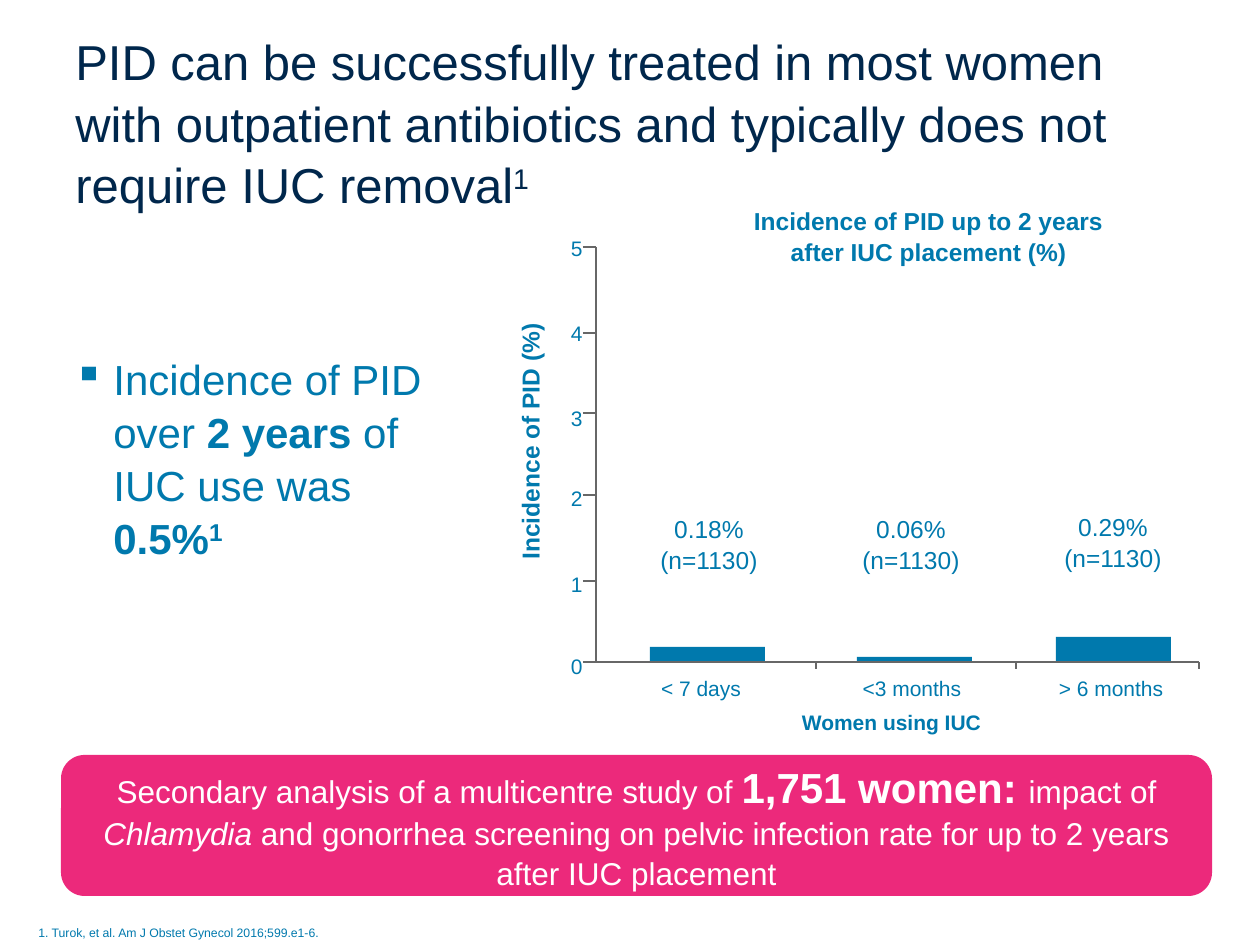
import dataclasses

import lxml.etree
import pptx
import pptx.dml.color
import pptx.enum.shapes
import pptx.enum.text
import pptx.oxml.ns
import pptx.util

SCALE = 914400 / 126
ALIGN = pptx.enum.text.PP_ALIGN
FIT = pptx.enum.text.MSO_AUTO_SIZE
ANCHOR = pptx.enum.text.MSO_ANCHOR
SHAPE = pptx.enum.shapes.MSO_SHAPE
LINK = pptx.enum.shapes.MSO_CONNECTOR
qn = pptx.oxml.ns.qn


@dataclasses.dataclass
class Theme:
    font: str = "Arial"
    navy: str = "00274C"
    blue: str = "0079AD"
    pink: str = "EC297B"
    white: str = "FFFFFF"
    gray: str = "676767"
    title: int = 28
    body: int = 24
    lead: int = 18
    label: int = 14
    small: int = 12
    note: int = 7
    gap: float = 1.05


def px(num):
    return pptx.util.Emu(round(num * SCALE))


def rgb(code):
    return pptx.dml.color.RGBColor.from_string(code)


class Deck:
    """Draw styled elements on the current slide."""

    def __init__(self, theme):
        self.theme = theme
        self.file = pptx.Presentation()
        self.file.slide_width, self.file.slide_height = px(1260), px(945)
        self.slide = self.file.slides.add_slide(self.file.slide_layouts[6])

    def words(self, frame, paras, size, color, align):
        for index, runs in enumerate(paras):
            para = frame.add_paragraph() if index else frame.paragraphs[0]
            para.alignment = align
            para.line_spacing = self.theme.gap
            for words, flags, *other in runs:
                run = para.add_run()
                run.text = words
                font = run.font
                font.name = self.theme.font
                font.size = pptx.util.Pt(other[0] if other else size)
                font.color.rgb = rgb(color)
                font.bold = "b" in flags
                font.italic = "i" in flags
                if "s" in flags:
                    font._element.set("baseline", "30000")

    def text(self, box, paras, size, color=None, align=ALIGN.CENTER,
             pad=None, wrap=True, grow=True, turn=0):
        area = self.slide.shapes.add_textbox(*map(px, box))
        area.rotation = turn
        frame = area.text_frame
        frame.word_wrap = wrap
        frame.auto_size = FIT.SHAPE_TO_FIT_TEXT if grow else FIT.NONE
        if pad is not None:
            frame.margin_left = frame.margin_right = px(pad[0])
            frame.margin_top = frame.margin_bottom = px(pad[1])
        self.words(frame, paras, size, color or self.theme.blue, align)
        return frame

    def label(self, box, lines, size, flags="", align=ALIGN.CENTER, pad=(0, 0)):
        self.text(box, [[(line, flags)] for line in lines], size,
                  align=align, pad=pad, wrap=False)

    def bullet(self, para, mark, dent):
        props = para._p.get_or_add_pPr()
        props.set("marL", str(px(dent)))
        props.set("indent", str(-px(dent)))
        lxml.etree.SubElement(props, qn("a:buChar")).set("char", mark)

    def block(self, box, color, kind=SHAPE.RECTANGLE):
        shape = self.slide.shapes.add_shape(kind, *map(px, box))
        shape.shadow.inherit = False
        shape.fill.solid()
        shape.fill.fore_color.rgb = rgb(color)
        shape.line.fill.background()
        return shape

    def line(self, *ends):
        link = self.slide.shapes.add_connector(LINK.STRAIGHT, *map(px, ends))
        link.line.color.rgb = rgb(self.theme.gray)
        link.line.width = pptx.util.Pt(1)
        lxml.etree.SubElement(link._element.spPr, qn("a:effectLst"))


def plot(deck):
    theme = deck.theme
    left, right, base = 596, 1199, 662
    groups = [
        ("< 7 days", 701, 82, 650, 15, "0.18%", 709, 513),
        ("<3 months", 912, 100, 857, 5, "0.06%", 911, 513),
        ("> 6 months", 1111, 106, 1056, 25, "0.29%", 1113, 511),
    ]
    for name, mid, wide, edge, tall, share, spot, top in groups:
        deck.block((edge, base - tall, 115, tall), theme.blue)
        deck.label((mid - wide // 2, 674, wide, 25), [name], theme.small)
        deck.label((spot - 49, top, 98, 59), [share, "(n=1130)"], theme.label)

    deck.line(left, 247, left, base)
    deck.line(left - 13, base, right, base)
    for tick in (816, 1016, right):
        deck.line(tick, base + 7, tick, base)
    marks = [(5, 247, 231), (4, 333, 316), (3, 413, 401),
             (2, 495, 481), (1, 581, 567), (0, base, 649)]
    for value, tick, top in marks:
        if value:
            deck.line(left - 13, tick, left, tick)
        deck.label((566, top, 18, 26), [str(value)], theme.small,
                   align=ALIGN.RIGHT, pad=(5, 3))

    deck.label((753, 205, 358, 59),
               ["Incidence of PID up to 2 years ", "after IUC placement (%) "],
               theme.label, "b")
    deck.text((780, 708, 223, 26), [[("Women using IUC", "b")]],
              theme.small, pad=(0, 0))
    deck.text((367, 420, 324, 43), [[("Incidence of PID (%)", "b")]],
              theme.label, turn=270)


def main():
    theme = Theme()
    deck = Deck(theme)
    plot(deck)

    head = deck.text((63, 37, 1134, 168), [[
        ("PID can be successfully treated in most women with outpatient "
         "antibiotics and typically does not require IUC removal", ""),
        ("1", "s")]], theme.title, theme.navy, ALIGN.LEFT, grow=False)
    head.vertical_anchor = ANCHOR.MIDDLE

    body = deck.text((61, 345, 422, 310), [[
        ("Incidence of PID over ", ""), ("2 years ", "b"),
        ("of IUC use was ", ""), ("0.5%", "b"), ("1", "bs")]],
        theme.body, align=ALIGN.LEFT, grow=False)
    deck.bullet(body.paragraphs[0], "▪", 40)

    panel = deck.block((61, 755, 1151, 141), theme.pink,
                       SHAPE.ROUNDED_RECTANGLE).text_frame
    panel.word_wrap = True
    panel.vertical_anchor = ANCHOR.MIDDLE
    deck.words(panel, [[
        ("Secondary analysis of a multicentre study of ", ""),
        ("1,751 women: ", "b", theme.body), ("impact of ", ""),
        ("Chlamydia", "i"),
        (" and gonorrhea screening on pelvic infection rate for up to "
         "2 years after IUC placement", "")]],
        theme.lead, theme.white, ALIGN.CENTER)

    deck.text((26, 918, 990, 27),
              [[("1. Turok, et al. Am J Obstet Gynecol 2016;599.e1-6.", "")]],
              theme.note, align=ALIGN.LEFT)
    deck.file.save("out.pptx")


if __name__ == "__main__":
    main()
